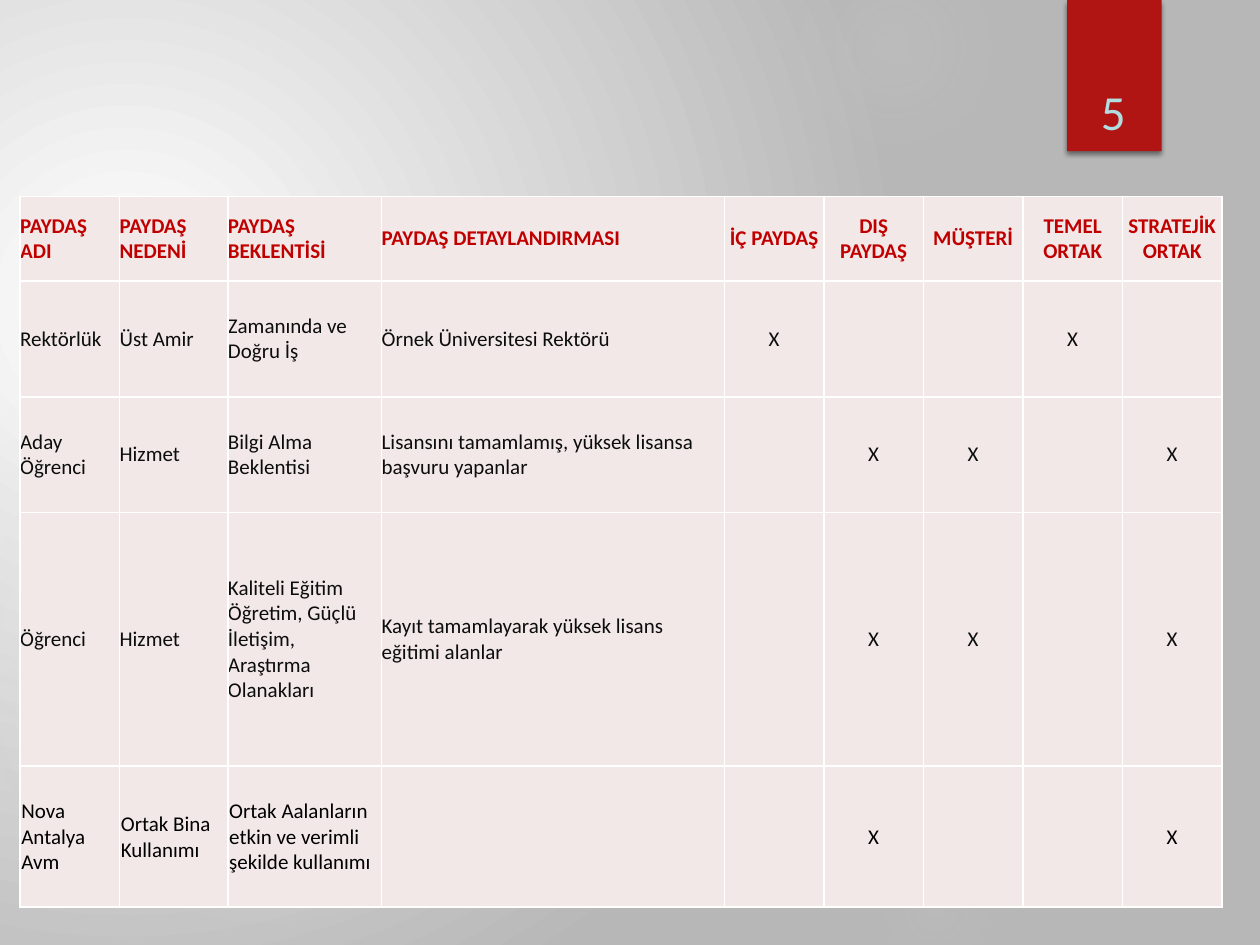
import pptx
import pptx.dml.color
import pptx.enum.shapes
import pptx.enum.text
import pptx.oxml
import pptx.oxml.ns
import pptx.util

Inches = pptx.util.Inches
Pt = pptx.util.Pt
ALIGN = pptx.enum.text.PP_ALIGN
ANCHOR = pptx.enum.text.MSO_ANCHOR
SHAPE = pptx.enum.shapes.MSO_SHAPE
qn = pptx.oxml.ns.qn
NAMESPACE = pptx.oxml.ns.nsdecls("a")

COLUMNS = [0.79, 0.86, 1.22, 2.72] + [0.79] * 5
TEXT_COLUMNS = 4
HEADER = ["PAYDAŞ ADI", "PAYDAŞ NEDENİ", "PAYDAŞ BEKLENTİSİ", "PAYDAŞ DETAYLANDIRMASI",
          "İÇ PAYDAŞ", "DIŞ PAYDAŞ", "MÜŞTERİ", "TEMEL ORTAK", "STRATEJİK ORTAK"]
STAKEHOLDERS = [
    ["Rektörlük", "Üst Amir", "Zamanında ve Doğru İş", "Örnek Üniversitesi Rektörü",
     "X", "", "", "X", ""],
    ["Aday Öğrenci", "Hizmet", "Bilgi Alma Beklentisi",
     "Lisansını tamamlamış, yüksek lisansa başvuru yapanlar", "", "X", "X", "", "X"],
    ["Öğrenci", "Hizmet", "Kaliteli Eğitim Öğretim, Güçlü İletişim, Araştırma Olanakları",
     "Kayıt tamamlayarak yüksek lisans eğitimi alanlar", "", "X", "X", "", "X"],
]
NEIGHBOUR = ["Nova Antalya Avm", "Ortak Bina Kullanımı",
             "Ortak Aalanların etkin ve verimli şekilde kullanımı", "",
             "", "X", "", "", "X"]

# left, top, diameter, then (position, opacity) of each stop, all in percent
GLOWS = [
    (6.89, 1.83, 3.08, [(0, 7), (36, 6), (69, 0)]),
    (6.22, -0.5, 1.75, [(0, 14), (36, 7), (73, 0)]),
    (6.89, 6.67, 1.08, [(0, 9), (36, 5), (66, 0)]),
    (-0.17, 2.92, 4.58, [(0, 11), (36, 10), (75, 0)]),
    (-0.92, 3.17, 2.58, [(0, 8), (36, 8), (72, 0)]),
]


def color(value):
    return pptx.dml.color.RGBColor.from_string(value)


def radial_gradient(owner, stops, focus):
    """Swap the first gradient in owner for a circular one; stops are (position, hex, opacity)."""
    stop_xml = "".join(
        f'<a:gs pos="{position * 1000}"><a:srgbClr val="{value}">'
        f'<a:alpha val="{opacity * 1000}"/></a:srgbClr></a:gs>'
        for position, value, opacity in stops)
    edges = " ".join(f'{side}="{share * 1000}"' for side, share in zip("ltrb", focus))
    gradient = pptx.oxml.parse_xml(
        f'<a:gradFill {NAMESPACE} rotWithShape="1"><a:gsLst>{stop_xml}</a:gsLst>'
        f'<a:path path="circle"><a:fillToRect {edges}/></a:path></a:gradFill>')
    old = owner.find(".//" + qn("a:gradFill"))
    old.getparent().replace(old, gradient)


class Slide:
    font = "Calibri"
    cell_fill = "F2E8E7"
    border = "FFFFFF"

    def __init__(self, deck):
        self.page = deck.slides.add_slide(deck.slide_layouts[6])

    def background(self):
        self.page.background.fill.gradient()
        radial_gradient(self.page.element, [(0, "FFFFFF", 100), (100, "B7B7B7", 100)],
                        (45, 65, 125, 100))

    def shape(self, kind, left, top, width, height):
        shape = self.page.shapes.add_shape(
            kind, Inches(left), Inches(top), Inches(width), Inches(height))
        shape.shadow.inherit = False
        shape.line.fill.background()
        return shape

    def glow(self, left, top, size, stops):
        circle = self.shape(SHAPE.OVAL, left, top, size, size)
        circle.fill.gradient()
        radial_gradient(circle.element, [(position, "D9D9D9", opacity)
                                         for position, opacity in stops], (50,) * 4)

    def ribbon(self, left, top, width, height):
        ribbon = self.shape(SHAPE.RECTANGLE, left, top, width, height)
        ribbon.fill.solid()
        ribbon.fill.fore_color.rgb = color("B01513")
        ribbon.element.spPr.find(qn("a:effectLst")).append(pptx.oxml.parse_xml(
            f'<a:outerShdw {NAMESPACE} blurRad="{Pt(3)}" dist="{Pt(2)}" dir="5400000" '
            'rotWithShape="0"><a:srgbClr val="000000"><a:alpha val="45000"/>'
            '</a:srgbClr></a:outerShdw>'))

    def set_text(self, frame, text, size, value, align, bold=False):
        para = frame.paragraphs[0]
        para.text = text
        para.alignment = align
        para.font.name = self.font
        para.font.size = Pt(size)
        para.font.bold = bold
        para.font.color.rgb = color(value)

    def page_number(self, text, left, top, width, height):
        box = self.page.shapes.add_textbox(
            Inches(left), Inches(top), Inches(width), Inches(height))
        box.text_frame.word_wrap = True
        box.text_frame.vertical_anchor = ANCHOR.BOTTOM
        self.set_text(box.text_frame, text, 28, "B1DDE0", ALIGN.CENTER)

    def cell(self, cell, text, align, value, bold, inset):
        cell.margin_left = cell.margin_right = cell.margin_top = Inches(inset)
        cell.margin_bottom = 0
        cell.vertical_anchor = ANCHOR.MIDDLE
        cell.fill.solid()
        cell.fill.fore_color.rgb = color(self.cell_fill)
        self.set_text(cell.text_frame, text, 12, value, align, bold)
        properties = cell._tc.get_or_add_tcPr()
        for index, side in enumerate("LRTB"):
            properties.insert(index, pptx.oxml.parse_xml(
                f'<a:ln{side} {NAMESPACE} w="{Pt(1)}"><a:solidFill>'
                f'<a:srgbClr val="{self.border}"/></a:solidFill></a:ln{side}>'))

    def table(self, left, top, heights, rows, value, inset=0, header_color=None):
        """Add a stakeholder table; the first row is a bold header if header_color is given."""
        table = self.page.shapes.add_table(
            len(rows), len(COLUMNS), Inches(left), Inches(top),
            Inches(sum(COLUMNS)), Inches(sum(heights))).table
        table.first_row = table.horz_banding = False
        for column, width in zip(table.columns, COLUMNS):
            column.width = Inches(width)
        for r, (height, texts) in enumerate(zip(heights, rows)):
            table.rows[r].height = Inches(height)
            header = r == 0 and header_color is not None
            for c, text in enumerate(texts):
                align = ALIGN.LEFT if c < TEXT_COLUMNS else ALIGN.CENTER
                self.cell(table.cell(r, c), text, align,
                          header_color if header else value, header, inset)


def main():
    deck = pptx.Presentation()
    deck.slide_width, deck.slide_height = Inches(10), Inches(7.5)
    slide = Slide(deck)
    slide.background()
    for glow in GLOWS:
        slide.glow(*glow)
    slide.ribbon(8.47, 0, 0.75, 1.2)
    slide.page_number("5", 8.49, 0.32, 0.69, 0.84)
    slide.table(0.16, 1.56, [0.67, 0.92, 0.92, 2.01], [HEADER] + STAKEHOLDERS,
                "0C0D0D", header_color="C00000")
    slide.table(0.16, 6.08, [1.12], [NEIGHBOUR], "000000", inset=0.01)
    deck.save("out.pptx")


if __name__ == "__main__":
    main()
